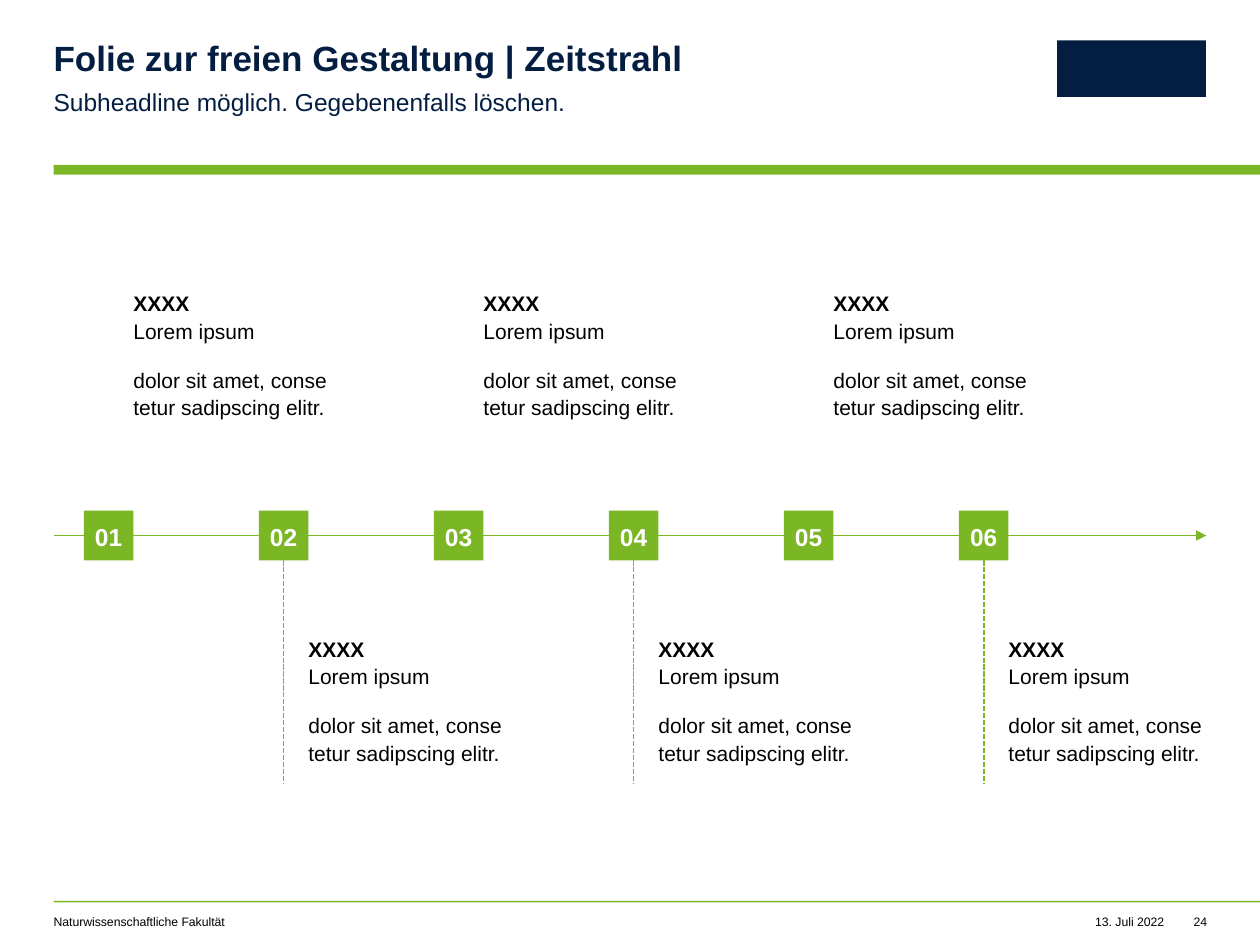
from copy import deepcopy

from lxml import etree
from pptx import Presentation
from pptx.dml.color import RGBColor
from pptx.enum.dml import MSO_LINE
from pptx.enum.shapes import MSO_CONNECTOR, MSO_SHAPE
from pptx.enum.text import MSO_ANCHOR, PP_ALIGN
from pptx.oxml.ns import qn
from pptx.util import Inches, Pt

RECTANGLE = MSO_SHAPE.RECTANGLE
STRAIGHT = MSO_CONNECTOR.STRAIGHT
DASH = MSO_LINE.SQUARE_DOT
MIDDLE = MSO_ANCHOR.MIDDLE
TOP = MSO_ANCHOR.TOP
LEFT, CENTER, RIGHT = PP_ALIGN.LEFT, PP_ALIGN.CENTER, PP_ALIGN.RIGHT

COLORS = {"green": "7BB725", "navy": "041E42", "black": "000000", "white": "FFFFFF"}
COLUMNS, ROWS = 100, 75
BOTTOM_SIDE = 2


class TimelineSlide:
    font = "Arial"

    def __init__(self, width=10, height=7.5):
        self.deck = Presentation()
        self.deck.slide_width = Inches(width)
        self.deck.slide_height = Inches(height)
        self.slide = self.deck.slides.add_slide(self.deck.slide_layouts[6])

    def x(self, column):
        return round(self.deck.slide_width * column / COLUMNS)

    def y(self, row):
        return round(self.deck.slide_height * row / ROWS)

    def area(self, column, row, width, height):
        return self.x(column), self.y(row), self.x(width), self.y(height)

    def color(self, name):
        return RGBColor.from_string(COLORS[name])

    def fill_text(self, frame, paragraphs, size, color, bold=False, align=LEFT,
                  spacing=1.0, after=0, anchor=TOP, wrap=True):
        frame.margin_left = frame.margin_right = 0
        frame.margin_top = frame.margin_bottom = 0
        frame.word_wrap = wrap
        frame.vertical_anchor = anchor
        frame.text = "\n".join(paragraphs)
        for paragraph in frame.paragraphs:
            paragraph.alignment = align
            paragraph.line_spacing = spacing
            paragraph.space_after = Pt(after)
            for run in paragraph.runs:
                run.font.name = self.font
                run.font.size = Pt(size)
                run.font.bold = bold
                run.font.color.rgb = self.color(color)
            for line_break in paragraph._p.findall(qn("a:br")):
                line_break.append(deepcopy(paragraph.runs[0].font._element))

    def text(self, area, paragraphs, size, color, **style):
        frame = self.slide.shapes.add_textbox(*self.area(*area)).text_frame
        self.fill_text(frame, paragraphs, size, color, **style)
        return frame

    def block(self, area, color):
        block = self.slide.shapes.add_shape(RECTANGLE, *self.area(*area))
        block.shadow.inherit = False
        block.fill.solid()
        block.fill.fore_color.rgb = self.color(color)
        block.line.fill.background()
        return block

    def marker(self, area, number):
        marker = self.block(area, "green")
        self.fill_text(marker.text_frame, [number], 14, "white", bold=True,
                       align=CENTER, spacing=1.1, after=12, anchor=MIDDLE)
        return marker

    def line(self, start, end, color):
        line = self.slide.shapes.add_connector(
            STRAIGHT, self.x(start[0]), self.y(start[1]), self.x(end[0]), self.y(end[1]))
        line.line.color.rgb = self.color(color)
        line.line.width = Pt(1)
        etree.SubElement(line._element.spPr, qn("a:effectLst"))
        return line

    def arrow(self, start, end, color):
        outline = self.line(start, end, color)._element.spPr.find(qn("a:ln"))
        etree.SubElement(outline, qn("a:tailEnd"), type="triangle")

    def drop_line(self, marker, start, end, color):
        drop = self.line(start, end, color)
        drop.line.dash_style = DASH
        drop.begin_connect(marker, BOTTOM_SIDE)

    def event(self, column, row, heading, topic, details):
        frame = self.text((column, row, 15.5, 10.4),
                          [f"{heading}\v{topic}", "\v".join(details)],
                          12, "black", spacing=1.1, after=12, wrap=False)
        frame.paragraphs[0].runs[0].font.bold = True


def main():
    page = TimelineSlide()
    margin, right = 4.25, 95.75

    page.block((margin, 13.1, COLUMNS - margin, 0.77), "green")
    page.block((margin, 71.5, COLUMNS - margin, 0.12), "green")
    page.block((83.9, 3.2, 11.8, 4.5), "navy")

    page.text((margin, 3.3, 56.1, 3), ["Folie zur freien Gestaltung | Zeitstrahl"],
              20, "navy", bold=True, spacing=0.9)
    page.text((margin, 6.7, 56.1, 2.4), ["Subheadline möglich. Gegebenenfalls löschen."],
              14, "navy", spacing=1.1, after=8)
    page.text((margin, 72.6, 44.9, 1.2), ["Naturwissenschaftliche Fakultät"], 7, "black")
    page.text((86.7, 72.6, 5.7, 1.2), ["13. Juli 2022"], 7, "black", align=RIGHT, wrap=False)
    page.text((94.7, 72.6, 1.1, 1.2), ["24"], 7, "black", align=RIGHT, wrap=False)

    axis, side, first, step = 42.5, 3.94, 6.65, 13.89
    page.arrow((margin, axis), (right, axis), "green")
    for index in range(6):
        column = first + index * step
        center, below = column + side / 2, axis + side / 2
        lower = index % 2 == 1
        marker = page.marker((column, axis - side / 2, side, side), f"{index + 1:02}")
        page.event(column + side, 50.3 if lower else 22.9, "XXXX", "Lorem ipsum",
                   ["dolor sit amet, conse", "tetur sadipscing elitr."])
        if lower:
            page.drop_line(marker, (center, below), (center, 62.2), "green")

    page.deck.save("out.pptx")


if __name__ == "__main__":
    main()
